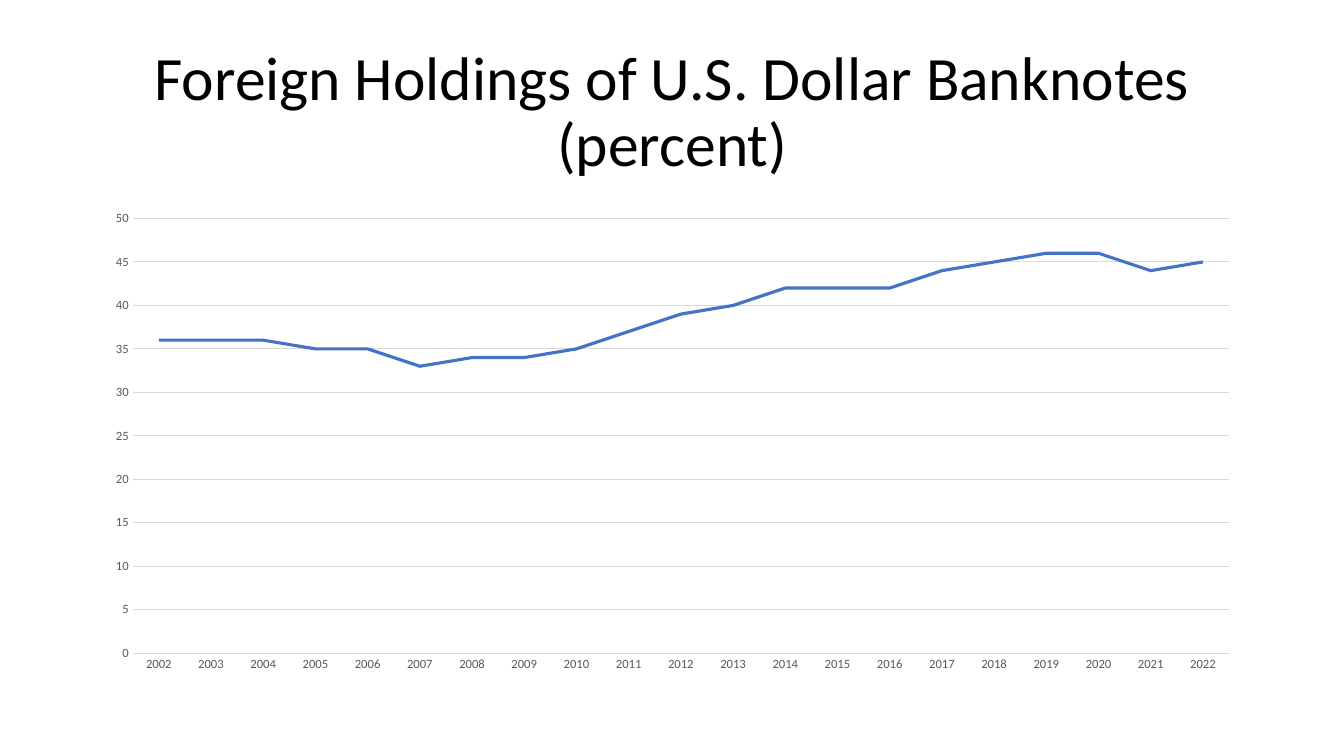
from typing import NamedTuple

from pptx import Presentation
from pptx.chart.axis import CategoryAxis, ValueAxis
from pptx.chart.chart import Chart
from pptx.chart.data import CategoryChartData
from pptx.dml.color import RGBColor
from pptx.dml.line import LineFormat
from pptx.enum.chart import XL_CHART_TYPE, XL_TICK_MARK
from pptx.enum.text import MSO_ANCHOR, PP_ALIGN
from pptx.slide import Slide
from pptx.text.text import Font
from pptx.util import Emu, Pt

LINE_CHART = XL_CHART_TYPE.LINE
NO_TICK = XL_TICK_MARK.NONE
CENTER = PP_ALIGN.CENTER
MIDDLE = MSO_ANCHOR.MIDDLE

BLACK = RGBColor(0x00, 0x00, 0x00)
LABEL_GRAY = RGBColor(0x59, 0x59, 0x59)
GRID_GRAY = RGBColor(0xD9, 0xD9, 0xD9)
SERIES_BLUE = RGBColor(0x44, 0x72, 0xC4)

FONT_NAME = "Calibri"
EMU_PER_PX = 9144  # 100 px to the inch
FIRST_YEAR = 2002
FOREIGN_SHARES = (36, 36, 36, 35, 35, 33, 34, 34, 35, 37, 39,
                  40, 42, 42, 42, 44, 45, 46, 46, 44, 45)


class Box(NamedTuple):
    left: int
    top: int
    width: int
    height: int

    def emu(self) -> list[Emu]:
        return [px(length) for length in self]


TITLE_BOX = Box(92, 40, 1150, 145)
CHART_BOX = Box(92, 200, 1150, 476)


def px(length: int) -> Emu:
    return Emu(length * EMU_PER_PX)


def style_font(font: Font, size: float, color: RGBColor) -> None:
    font.name = FONT_NAME
    font.size = Pt(size)
    font.bold = False
    font.color.rgb = color


def style_line(line: LineFormat, color: RGBColor, width: float) -> None:
    line.color.rgb = color
    line.width = Pt(width)


def add_text(slide: Slide, box: Box, text: str, *, size: float,
             color: RGBColor, align: PP_ALIGN, anchor: MSO_ANCHOR,
             line_spacing: float) -> None:
    frame = slide.shapes.add_textbox(*box.emu()).text_frame
    frame.word_wrap = True
    frame.vertical_anchor = anchor
    paragraph = frame.paragraphs[0]
    paragraph.alignment = align
    paragraph.line_spacing = line_spacing
    for index, line in enumerate(text.split("\n")):
        if index:
            paragraph.add_line_break()
        run = paragraph.add_run()
        run.text = line
        style_font(run.font, size, color)


def style_axis(axis: CategoryAxis | ValueAxis) -> None:
    axis.major_tick_mark = NO_TICK
    axis.minor_tick_mark = NO_TICK
    style_font(axis.tick_labels.font, 9, LABEL_GRAY)


def add_holdings_chart(slide: Slide, box: Box) -> Chart:
    data = CategoryChartData(number_format="General")
    data.categories = [str(FIRST_YEAR + offset)
                       for offset in range(len(FOREIGN_SHARES))]
    data.add_series("Series 1", FOREIGN_SHARES)
    chart = slide.shapes.add_chart(LINE_CHART, *box.emu(), data).chart
    chart.has_title = False
    chart.has_legend = False
    style_font(chart.font, 10, BLACK)

    # Share line
    chart.plots[0].vary_by_categories = False
    shares = chart.plots[0].series[0]
    shares.smooth = False
    style_line(shares.format.line, SERIES_BLUE, 2.25)

    # Years
    years = chart.category_axis
    style_axis(years)
    style_line(years.format.line, GRID_GRAY, 0.75)

    # Percent scale and gridlines
    percent = chart.value_axis
    style_axis(percent)
    percent.minimum_scale = 0
    percent.maximum_scale = 50
    percent.major_unit = 5
    percent.format.line.fill.background()
    percent.has_major_gridlines = True
    style_line(percent.major_gridlines.format.line, GRID_GRAY, 0.75)
    return chart


def main() -> None:
    deck = Presentation()
    deck.slide_width = px(1333)
    deck.slide_height = px(750)
    slide = deck.slides.add_slide(deck.slide_layouts[6])

    # Title
    add_text(slide, TITLE_BOX,
             "Foreign Holdings of U.S. Dollar Banknotes\n(percent)",
             size=44, color=BLACK, align=CENTER, anchor=MIDDLE,
             line_spacing=0.9)

    # Holdings over time
    add_holdings_chart(slide, CHART_BOX)

    deck.save("out.pptx")


if __name__ == "__main__":
    main()
